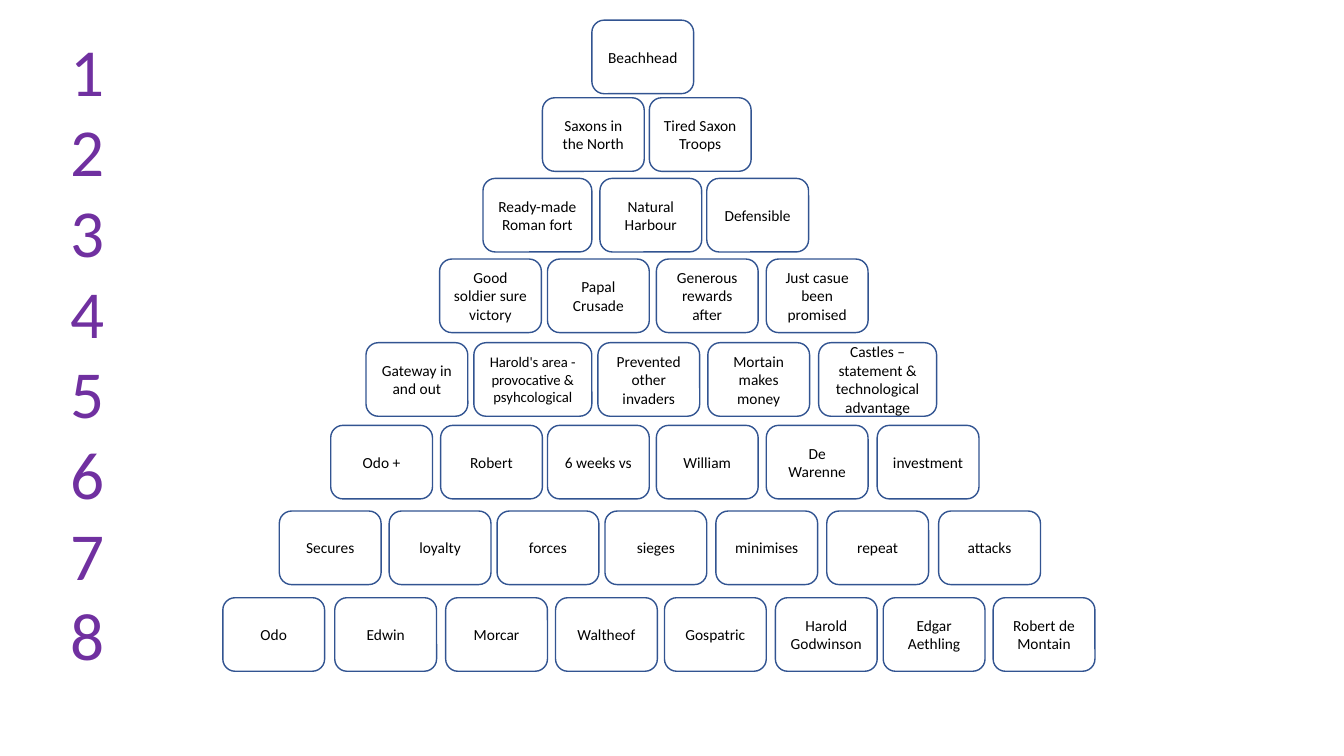
from pptx import Presentation
from pptx.dml.color import RGBColor as Color
from pptx.enum.shapes import MSO_SHAPE as Shape
from pptx.enum.text import MSO_ANCHOR as Anchor, PP_ALIGN as Align
from pptx.util import Inches, Pt

COLOURS = {"outline": "325491", "text": "000000", "number": "7030A0"}
FONT = "Calibri"
CARD_WIDTH, CARD_HEIGHT = 1.01, 0.73
WIDE_CARDS = {
    "Ready-made Roman fort": 1.08,
    "Harold's area - provocative & psyhcological": 1.17,
    "Castles – statement &\ntechnological advantage": 1.17,
}
SMALL_TEXT = {"Harold's area - provocative & psyhcological": 10.5}

PYRAMID = [
    (0.2, {"Beachhead": 5.87}),
    (0.97, {"Saxons in the North": 5.38, "Tired Saxon Troops": 6.44}),
    (1.77, {"Ready-made Roman fort": 4.79, "Natural Harbour": 5.95, "Defensible": 7.01}),
    (2.57, {"Good soldier sure victory": 4.36, "Papal Crusade": 5.43,
            "Generous rewards after": 6.51, "Just casue been promised": 7.6}),
    (3.4, {"Gateway in and out": 3.63, "Harold's area - provocative & psyhcological": 4.7,
           "Prevented other invaders": 5.93, "Mortain makes money": 7.02,
           "Castles – statement &\ntechnological advantage": 8.12}),
    (4.22, {"Odo +": 3.28, "Robert": 4.37, "6 weeks vs": 5.43,
            "William": 6.51, "De Warenne": 7.6, "investment": 8.7}),
    (5.07, {"Secures": 2.77, "loyalty": 3.86, "forces": 4.93, "sieges": 6,
            "minimises": 7.1, "repeat": 8.2, "attacks": 9.31}),
    (5.93, {"Odo": 2.21, "Edwin": 3.32, "Morcar": 4.42, "Waltheof": 5.51, "Gospatric": 6.59,
            "Harold Godwinson": 7.69, "Edgar Aethling": 8.76, "Robert de Montain": 9.85}),
]


def write(frame, text, size=11, colour="text", align=Align.CENTER, anchor=Anchor.MIDDLE):
    frame.word_wrap = True
    frame.vertical_anchor = anchor
    for index, line in enumerate(text.split("\n")):
        para = frame.paragraphs[0] if index == 0 else frame.add_paragraph()
        para.alignment = align
        span = para.add_run()
        span.text = line
        span.font.name = FONT
        span.font.size = Pt(size)
        span.font.color.rgb = Color.from_string(COLOURS[colour])


class PyramidPage:
    def __init__(self, deck):
        self.page = deck.slides.add_slide(deck.slide_layouts[6])

    def card(self, left, top, text):
        width = WIDE_CARDS.get(text, CARD_WIDTH)
        box = self.page.shapes.add_shape(
            Shape.ROUNDED_RECTANGLE, Inches(left), Inches(top), Inches(width), Inches(CARD_HEIGHT))
        box.shadow.inherit = False
        box.fill.background()
        box.line.color.rgb = Color.from_string(COLOURS["outline"])
        box.line.width = Pt(1)
        write(box.text_frame, text, size=SMALL_TEXT.get(text, 11))

    def numbers(self, left, top, width, height, count):
        box = self.page.shapes.add_textbox(Inches(left), Inches(top), Inches(width), Inches(height))
        text = "\n".join(str(number) for number in range(1, count + 1))
        write(box.text_frame, text, size=48, colour="number", align=Align.LEFT, anchor=Anchor.TOP)


def main():
    deck = Presentation()
    deck.slide_width, deck.slide_height = Inches(13.33), Inches(7.5)
    page = PyramidPage(deck)
    for top, cards in PYRAMID:
        for text, left in cards.items():
            page.card(left, top, text)
    page.numbers(0.6, 0.24, 1.41, 6.6, len(PYRAMID))
    deck.save("out.pptx")


if __name__ == "__main__":
    main()
